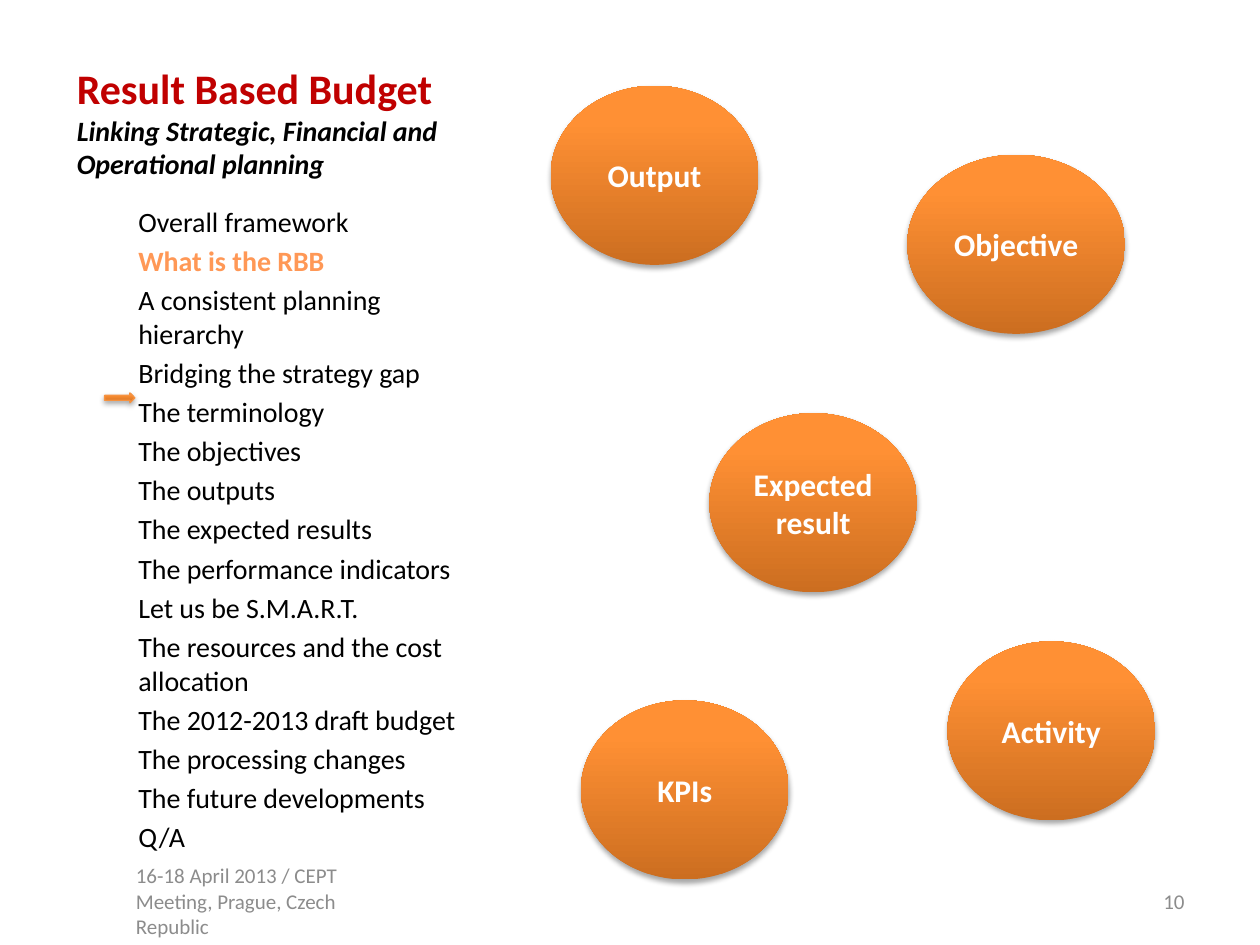
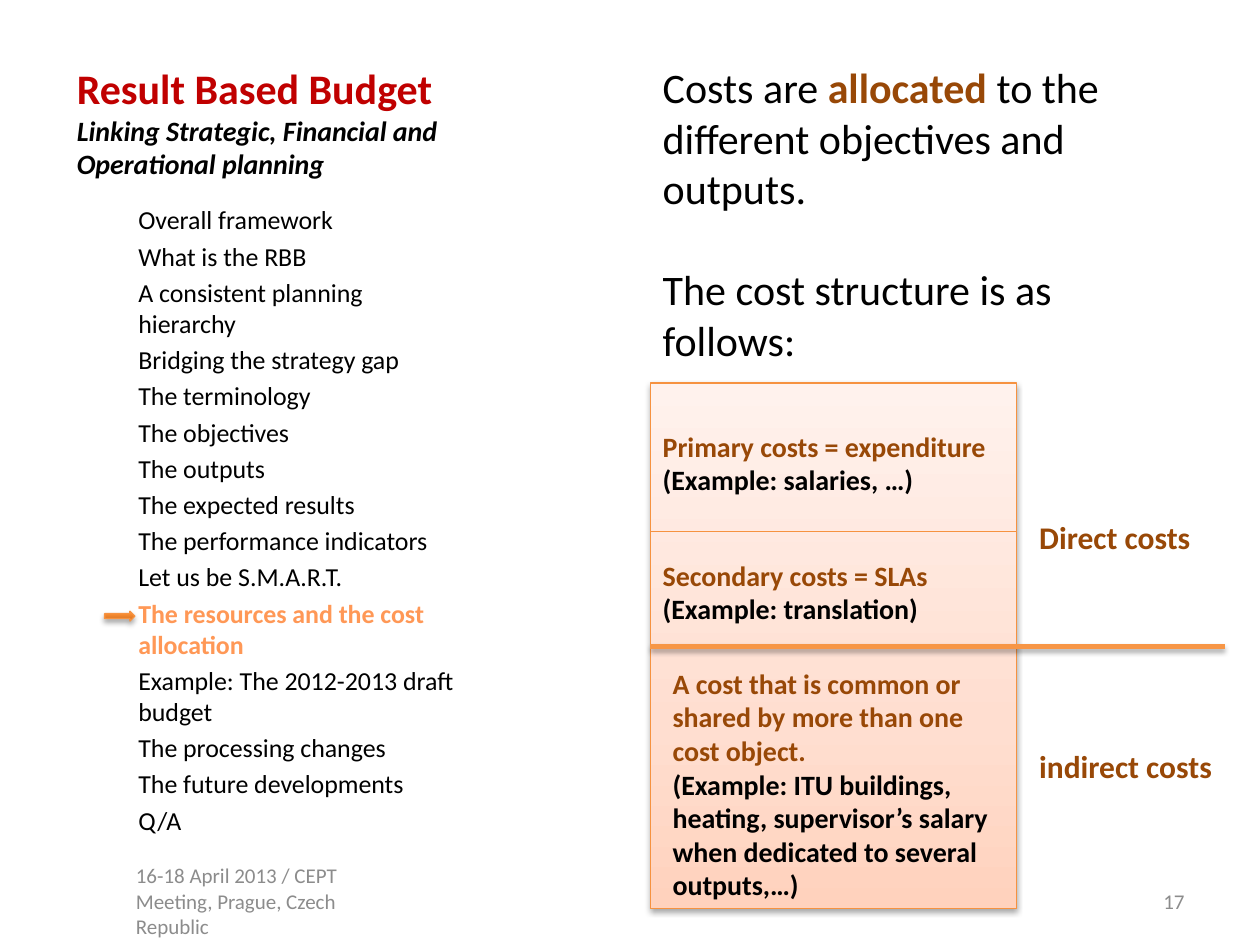
import pptx
import pptx.util
import pptx.dml.color
import pptx.enum.shapes
import pptx.enum.text
import pptx.oxml.ns
from lxml import etree

Cm, Pt = pptx.util.Cm, pptx.util.Pt
SHAPE = pptx.enum.shapes.MSO_SHAPE
ALIGN = pptx.enum.text.PP_ALIGN
ANCHOR = pptx.enum.text.MSO_ANCHOR
qn = pptx.oxml.ns.qn

FONT = "Calibri"
BLACK, WHITE, GREY = "000000", "FFFFFF", "8C8C8C"
RED, BROWN, GLOW = "C00000", "984807", "FF9856"
EDGE, RULE = "F69240", "F79646"
ORANGE = [(0, "CC6E20"), (80, "FF9034"), (100, "FF9136")]
PEACH = [(0, "FFD2BD"), (35, "FFDED0"), (100, "FFF2ED")]

TOPICS = [
    "Overall framework", "What is the RBB", "A consistent planning hierarchy",
    "Bridging the strategy gap", "The terminology", "The objectives",
    "The outputs", "The expected results", "The performance indicators",
    "Let us be S.M.A.R.T.", "The resources and the cost allocation",
    "The 2012-2013 draft budget", "The processing changes",
    "The future developments", "Q/A",
]


def tint(code):
    return pptx.dml.color.RGBColor.from_string(code)


def blend(shape, stops):
    """Fill a shape with colour stops that run from bottom to top."""
    shape.fill.gradient()
    shape.fill.gradient_angle = 90
    row = shape._element.spPr.find(qn("a:gradFill")).find(qn("a:gsLst"))
    for old in list(row):
        row.remove(old)
    for place, code in stops:
        stop = etree.SubElement(row, qn("a:gs"), pos=str(place * 1000))
        etree.SubElement(stop, qn("a:srgbClr"), val=code)


def shade(item, alpha=None):
    """Replace the theme shadow by a soft one below, or by none."""
    effects = etree.SubElement(item._element.spPr, qn("a:effectLst"))
    if alpha:
        drop = etree.SubElement(
            effects, qn("a:outerShdw"), blurRad=str(Pt(3.1)),
            dist=str(Pt(1.8)), dir="5400000", rotWithShape="0")
        code = etree.SubElement(drop, qn("a:srgbClr"), val=BLACK)
        etree.SubElement(code, qn("a:alpha"), val=str(alpha * 1000))


def write(frame, lines, size=16, color=BLACK, bold=False, italic=False,
          align=ALIGN.LEFT, anchor=ANCHOR.TOP, wrap=True, gap=0, indent=0):
    """Each line is a string or a list of (text, changes) runs."""
    frame.word_wrap = wrap
    frame.vertical_anchor = anchor
    for i, line in enumerate(lines):
        para = frame.paragraphs[0] if i == 0 else frame.add_paragraph()
        para.alignment = align
        if indent:
            para._p.get_or_add_pPr().set("marL", str(Cm(indent)))
        if i and gap:
            para.space_before = Pt(gap)
        for text, change in [(line, {})] if isinstance(line, str) else line:
            run = para.add_run()
            run.text = text
            font = run.font
            font.name = FONT
            font.size = Pt(change.get("size", size))
            font.bold = change.get("bold", bold)
            font.italic = change.get("italic", italic)
            font.color.rgb = tint(change.get("color", color))


class Deck:
    def __init__(self):
        self.file = pptx.Presentation()
        self.file.slide_width = Cm(25.4)
        self.file.slide_height = Cm(19.05)

    def page(self, number, topics, focus, mark, size):
        """Start a slide with its title, topic list, pointer and footer."""
        self.slide = self.file.slides.add_slide(self.file.slide_layouts[6])
        items = [[(t, {"color": GLOW, "bold": True})] if t == focus else t
                 for t in topics]
        self.text(1.27, 3.99, 8.36, 13.03, items, size=size,
                  gap=size * 0.2, indent=1.27)
        self.shape(SHAPE.RIGHT_ARROW, 2.11, mark, 0.61, 0.2, ORANGE, EDGE)
        self.text(1.3, 0.53, 8.36, 3.23, [
            [("Result Based Budget",
              {"size": 24, "color": RED, "italic": False})],
            "Linking Strategic, Financial and Operational planning",
        ], bold=True, italic=True, anchor=ANCHOR.BOTTOM)
        foot = {"size": 12, "color": GREY, "anchor": ANCHOR.MIDDLE}
        self.text(2.49, 17.65, 5.92, 1.02,
                  ["16-18 April 2013 / CEPT Meeting, Prague, Czech Republic"],
                  **foot)
        self.text(18.21, 17.65, 5.92, 1.02, [str(number)],
                  align=ALIGN.RIGHT, **foot)

    def text(self, x, y, w, h, lines, **style):
        box = self.slide.shapes.add_textbox(Cm(x), Cm(y), Cm(w), Cm(h))
        write(box.text_frame, lines, **style)

    def shape(self, kind, x, y, w, h, stops, edge=None):
        item = self.slide.shapes.add_shape(kind, Cm(x), Cm(y), Cm(w), Cm(h))
        blend(item, stops)
        if edge:
            item.line.color.rgb = tint(edge)
            item.line.width = Pt(0.75)
        else:
            item.line.fill.background()
        shade(item, 35)
        return item

    def bubble(self, label, x, y, w=4.19):
        item = self.shape(SHAPE.OVAL, x, y, w, 3.61, ORANGE)
        write(item.text_frame, [label], size=18, color=WHITE, bold=True,
              align=ALIGN.CENTER, anchor=ANCHOR.MIDDLE)

    def rule(self, x, y, end, color, width, alpha=None):
        line = self.slide.shapes.add_connector(
            pptx.enum.shapes.MSO_CONNECTOR.STRAIGHT,
            Cm(x), Cm(y), Cm(end), Cm(y))
        line.line.color.rgb = tint(color)
        line.line.width = Pt(width)
        shade(line, alpha)


def terms(deck):
    deck.page(10, TOPICS, "What is the RBB", 7.92, 16)
    deck.bubble("Output", 11.1, 1.73)
    deck.bubble("KPIs", 11.71, 14.12)
    deck.bubble("Expected result", 14.3, 8.33)
    deck.bubble("Objective", 18.29, 3.12, 4.39)
    deck.bubble("Activity", 19.1, 12.93)


def costs(deck):
    draft = "The 2012-2013 draft budget"
    topics = ["Example: " + t if t == draft else t for t in TOPICS]
    deck.page(17, topics, "The resources and the cost allocation", 12.32, 14.8)
    left, width = 13.11, 7.39
    deck.text(left, 1.12, 9.6, 6.4, [
        [("Costs are ", {}), ("allocated", {"color": BROWN, "bold": True}),
         (" to the different objectives and outputs.", {})],
        "The cost structure is as follows:",
    ], size=24, gap=29)
    deck.shape(SHAPE.RECTANGLE, left, 7.72, width, 10.59, PEACH, EDGE)
    deck.rule(left, 13.03, 24.69, RULE, 3, 35)
    deck.rule(left, 10.72, left + width, EDGE, 0.75)
    for label, y, w in [("Direct costs", 10.31, 3.61),
                        ("indirect costs", 14.94, 3.99)]:
        deck.text(20.7, y, w, 1.02, [label], size=18, color=BROWN,
                  bold=True, wrap=False)
    for x, y, h, cost, example in [
        (left, 8.53, 1.63, "Primary costs = expenditure",
         "(Example: salaries, …)"),
        (left, 11.13, 1.63, "Secondary costs = SLAs",
         "(Example: translation)"),
        (13.31, 13.31, 5.74,
         "A cost that is common or shared by more than one cost object.",
         "(Example: ITU buildings, heating, supervisor’s salary "
         "when dedicated to several outputs,…)"),
    ]:
        deck.text(x, y, width, h, [[(cost, {"color": BROWN})], example],
                  bold=True)


def main():
    deck = Deck()
    terms(deck)
    costs(deck)
    deck.file.save("out.pptx")


if __name__ == "__main__":
    main()
